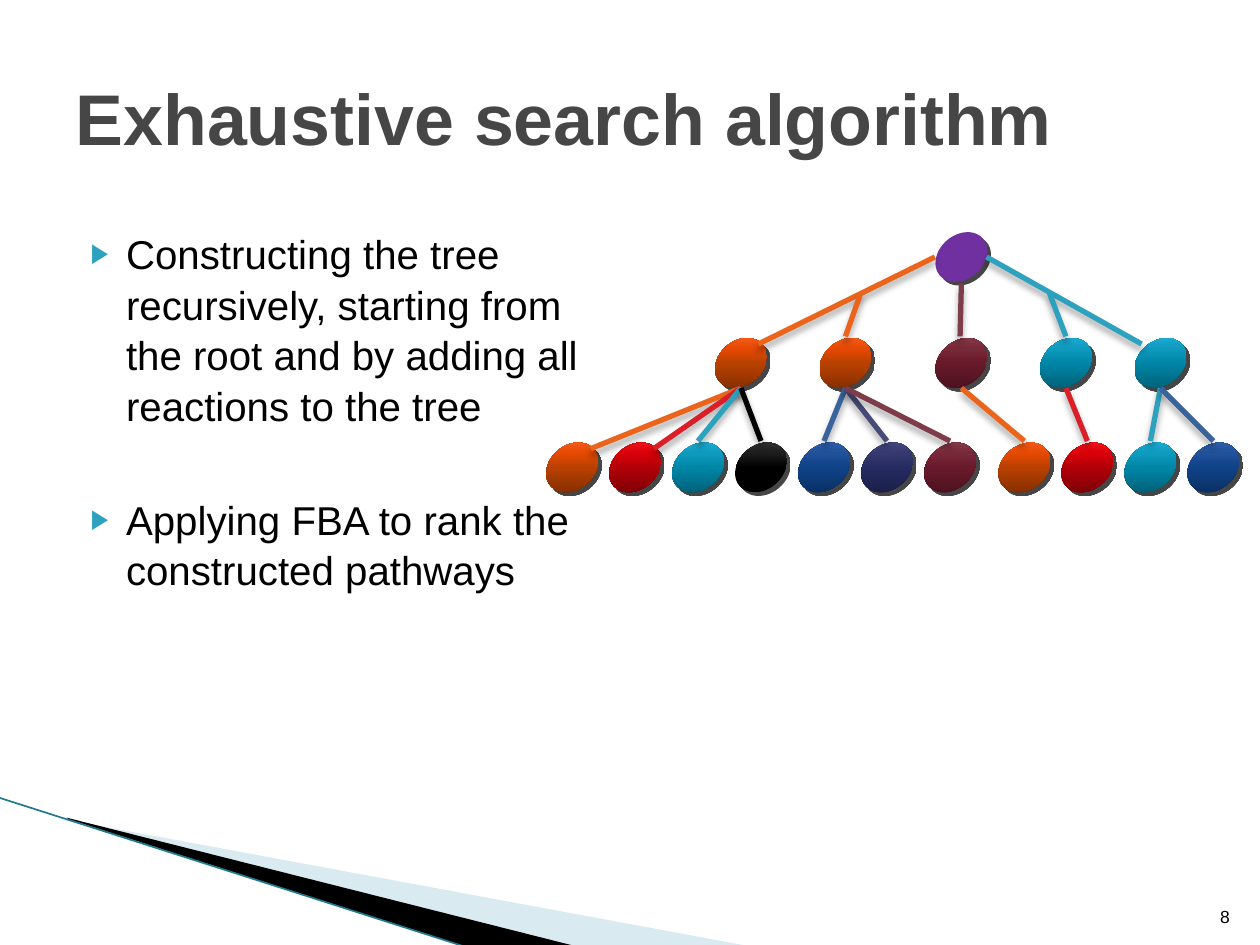
from dataclasses import dataclass

from lxml.etree import SubElement
from pptx import Presentation
from pptx.dml.color import RGBColor as Rgb
from pptx.enum.shapes import MSO_CONNECTOR as Connector, MSO_SHAPE as Preset
from pptx.enum.text import MSO_ANCHOR as Anchor, MSO_AUTO_SIZE as AutoSize, PP_ALIGN as Align
from pptx.oxml import parse_xml
from pptx.oxml.ns import nsdecls, qn
from pptx.util import Inches, Pt

COLORS = {
    "title": "464646", "black": "000000", "bullet": "2DA2BF",
    "wedge": "A0CBDC", "edge": "1F7A8C", "rim": "464646",
}
NODE_FILLS = {
    "purple": ["7030A0"],
    "orange": ["732800", "B94100", "E64900", "FF6933"],
    "maroon": ["420F1A", "681A2B", "772939", "944755"],
    "teal": ["005367", "0086A7", "0E9ABE", "2CB9E3"],
    "red": ["6D0005", "B00008", "DA0008", "FF2429"],
    "black": ["000000", "000000", "1D1D1D", "424242"],
    "blue": ["072956", "104288", "205199", "3D6BB9"],
    "indigo": ["171A3D", "262B61", "353970", "51568D"],
}
LINE_COLORS = {
    "orange": "EB641B", "maroon": "7D3C4A", "teal": "2DA2BF", "red": "DA1F28",
    "black": "000000", "blue": "39639D", "indigo": "474B78",
}
GRADIENT_STOPS = [0, 50, 70, 100]
NODE_SIZE = 0.42
RADIUS = NODE_SIZE / 2
ROOT_Y, CHILD_Y, LEAF_Y = 1.83, 2.67, 3.5


@dataclass(frozen=True)
class Node:
    left: float
    top: float
    color: str

    @property
    def center(self) -> float:
        return self.left + RADIUS


@dataclass(frozen=True)
class Branch:
    start: tuple[float, float]
    end: tuple[float, float]
    color: str


@dataclass(frozen=True)
class Wedge:
    points: list[tuple[float, float]]
    color: str
    opacity: int


ROOT = Node(7.42, ROOT_Y, "purple")
CHILDREN = [Node(left, CHILD_Y, color) for left, color in [
    (5.67, "orange"), (6.5, "orange"), (7.42, "maroon"), (8.25, "teal"), (9, "teal")]]
LEAF_COLORS = [
    ["orange", "red", "teal", "black"], ["blue", "indigo", "maroon"],
    ["orange"], ["red"], ["teal", "blue"]]
LEAF_STARTS = [4.33, 6.33, 7.92, 8.42, 8.92]
ROOT_BRANCHES = [
    Branch((7.42, 2.04), (6.02, 2.73), "orange"),
    Branch((6.83, 2.33), (6.71, 2.67), "orange"),
    Branch((7.63, 2.25), (7.62, 2.67), "maroon"),
    Branch((7.83, 2.04), (9.06, 2.73), "teal"),
    Branch((8.33, 2.33), (8.46, 2.67), "teal"),
]
WEDGES = [
    Wedge([(0.55, 6.51), (5.95, 7.51), (4.56, 7.51), (0.55, 6.5)], "wedge", 40),
    Wedge([(0.53, 6.49), (4.57, 7.51), (3.72, 7.52), (0.54, 6.5)], "black", 100),
]


def add_shadow(shape, color: str, opacity: int, blur: float, distance: float, angle: int) -> None:
    shape._element.spPr.append(parse_xml(
        f'<a:effectLst {nsdecls("a")}><a:outerShdw blurRad="{Pt(blur)}" dist="{Pt(distance)}" '
        f'dir="{angle * 60000}" rotWithShape="0"><a:srgbClr val="{color}">'
        f'<a:alpha val="{opacity * 1000}"/></a:srgbClr></a:outerShdw></a:effectLst>'))


def add_line(page, start: tuple[float, float], end: tuple[float, float], color: str, width: float):
    line = page.shapes.add_connector(Connector.STRAIGHT, *map(Inches, start + end))
    line.line.color.rgb = Rgb.from_string(color)
    line.line.width = Pt(width)
    return line


def add_branch(page, branch: Branch) -> None:
    line = add_line(page, branch.start, branch.end, LINE_COLORS[branch.color], 3)
    add_shadow(line, COLORS["black"], 35, 4, 3, 90)


def add_node(page, node: Node) -> None:
    width, height = 0.45, 0.35
    disc = page.shapes.add_shape(
        Preset.OVAL, Inches(node.center - width / 2), Inches(node.top + RADIUS - height / 2),
        Inches(width), Inches(height))
    disc.rotation = -40
    colors = NODE_FILLS[node.color]
    if len(colors) == 1:
        disc.fill.solid()
        disc.fill.fore_color.rgb = Rgb.from_string(colors[0])
    else:
        stops = "".join(
            f'<a:gs pos="{stop * 1000}"><a:srgbClr val="{color}"/></a:gs>'
            for stop, color in zip(GRADIENT_STOPS, colors))
        disc._element.spPr.insert(2, parse_xml(
            f'<a:gradFill {nsdecls("a")} rotWithShape="0"><a:gsLst>{stops}</a:gsLst>'
            '<a:lin ang="16200000" scaled="0"/></a:gradFill>'))
    disc.line.fill.background()
    add_shadow(disc, COLORS["rim"], 100, 0, 3, 45)


def add_wedge(page, wedge: Wedge) -> None:
    points = [(Inches(x), Inches(y)) for x, y in wedge.points]
    builder = page.shapes.build_freeform(*points[0])
    builder.add_line_segments(points[1:])
    shape = builder.convert_to_shape()
    shape.shadow.inherit = False
    shape.fill.solid()
    shape.fill.fore_color.rgb = Rgb.from_string(COLORS[wedge.color])
    color = shape._element.spPr.find(f'{qn("a:solidFill")}/{qn("a:srgbClr")}')
    SubElement(color, qn("a:alpha")).set("val", str(wedge.opacity * 1000))
    shape.line.fill.background()


def place(box, left: float, top: float, width: float, height: float, anchor: Anchor) -> None:
    box.left, box.top, box.width, box.height = map(Inches, (left, top, width, height))
    box.text_frame.word_wrap = True
    box.text_frame.auto_size = AutoSize.NONE
    box.text_frame.vertical_anchor = anchor


def format_para(para, size: float, color: str, align: Align = Align.LEFT, bold: bool = False) -> None:
    para.alignment = align
    for span in para.runs:
        span.font.name = "Arial"
        span.font.size = Pt(size)
        span.font.bold = bold
        span.font.color.rgb = Rgb.from_string(COLORS[color])


def add_bullet(para) -> None:
    props = para._p.get_or_add_pPr()
    props.set("marL", str(Inches(0.4)))
    props.set("indent", str(Inches(-0.28)))
    color = SubElement(props, qn("a:buClr"))
    SubElement(color, qn("a:srgbClr")).set("val", COLORS["bullet"])
    SubElement(props, qn("a:buSzPct")).set("val", "68000")
    SubElement(props, qn("a:buFont")).set("typeface", "Arial")
    SubElement(props, qn("a:buChar")).set("char", "▶")


def add_texts(page) -> None:
    title, body = page.placeholders
    place(title, 0.5, 0.3, 8.83, 1.25, Anchor.MIDDLE)
    title.text_frame.text = "Exhaustive search algorithm"
    format_para(title.text_frame.paragraphs[0], 41, "title", bold=True)

    place(body, 0.5, 1.75, 4.33, 5.33, Anchor.TOP)
    body.text_frame.text = (
        "Constructing the tree recursively, starting from the root and by adding all "
        "reactions to the tree\nApplying FBA to rank the constructed pathways")
    for para, gap in zip(body.text_frame.paragraphs, [0, 36]):
        add_bullet(para)
        para.space_before = Pt(gap)
        para.line_spacing = 1.05
        format_para(para, 23, "black")

    number = page.shapes.add_textbox(0, 0, 0, 0)
    place(number, 9.46, 7.01, 0.4, 0.4, Anchor.BOTTOM)
    number.text_frame.text = "8"
    format_para(number.text_frame.paragraphs[0], 10, "black", Align.RIGHT)


def add_tree(page) -> None:
    for node in [ROOT, *CHILDREN]:
        add_node(page, node)
    for branch in ROOT_BRANCHES:
        add_branch(page, branch)
    for parent, start, colors in zip(CHILDREN, LEAF_STARTS, LEAF_COLORS):
        leaves = [Node(start + 0.5 * index, LEAF_Y, color) for index, color in enumerate(colors)]
        for leaf in leaves:
            add_node(page, leaf)
        for leaf in leaves:
            far = parent.left - leaf.left > 0.5
            end = (leaf.left + 0.36, LEAF_Y + 0.06) if far else (leaf.center, LEAF_Y)
            add_branch(page, Branch((parent.center, 3.08), end, leaf.color))


def main() -> None:
    deck = Presentation()
    deck.slide_width, deck.slide_height = Inches(10), Inches(7.5)
    page = deck.slides.add_slide(deck.slide_layouts[1])
    for wedge in WEDGES:
        add_wedge(page, wedge)
    edge = add_line(page, (-0.01, 6.33), (3.71, 7.52), COLORS["edge"], 0.95)
    SubElement(edge._element.spPr, qn("a:effectLst"))
    add_texts(page)
    add_tree(page)
    deck.save("out.pptx")


if __name__ == "__main__":
    main()
